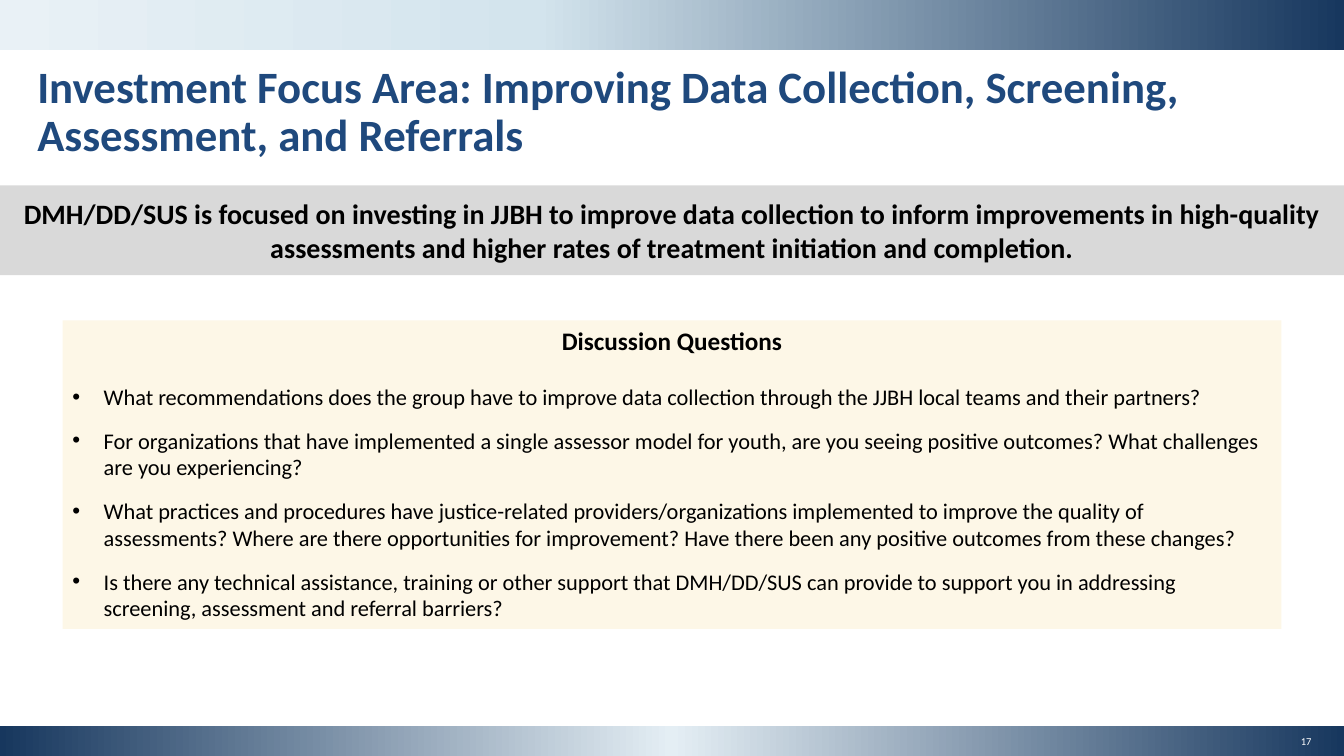
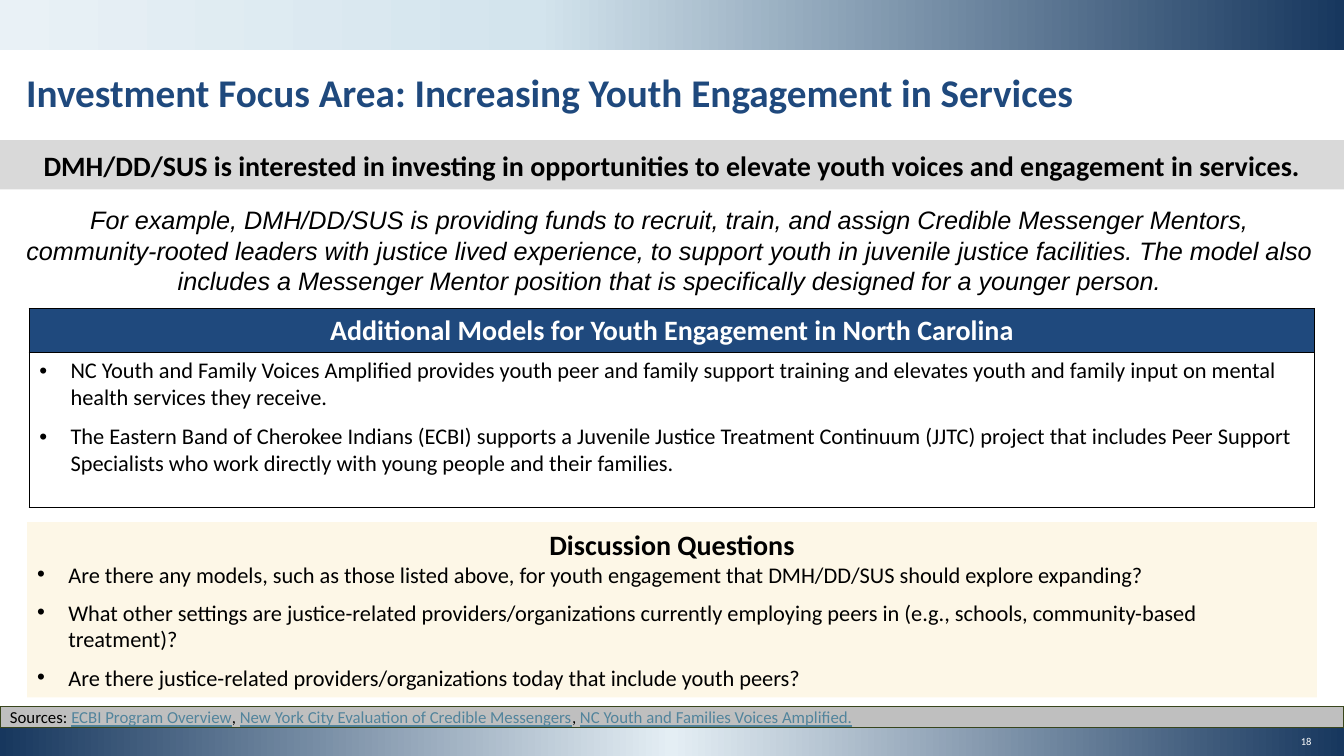
from copy import deepcopy

from lxml.etree import SubElement
from pptx import Presentation
from pptx.dml.color import RGBColor
from pptx.enum.shapes import MSO_SHAPE as Shape
from pptx.enum.text import MSO_ANCHOR as Anchor, PP_ALIGN as Align
from pptx.oxml.ns import qn
from pptx.util import Inches, Pt

NAVY = RGBColor(0x17, 0x37, 0x5E)
BLUE = RGBColor(0x1F, 0x49, 0x7D)
ICE = RGBColor(0xE4, 0xEE, 0xF4)
PALE = RGBColor(0xD3, 0xE4, 0xED)
MIST = RGBColor(0xE9, 0xF1, 0xF6)
GRAY = RGBColor(0xD9, 0xD9, 0xD9)
MID_GRAY = RGBColor(0xBF, 0xBF, 0xBF)
OLIVE = RGBColor(0x38, 0x45, 0x1C)
CREAM = RGBColor(0xFD, 0xF7, 0xE7)
LINK = RGBColor(0x52, 0x84, 0x9C)
BLACK = RGBColor(0, 0, 0)
WHITE = RGBColor(0xFF, 0xFF, 0xFF)

WIDTH, HEIGHT = 13.33, 7.5
TOP_STOPS = [(0, NAVY), (60, PALE), (100, MIST)]
FOOTER_STOPS = [(0, NAVY), (50, ICE), (100, NAVY)]

DATA_SLIDE = {
    "number": 17,
    "title": "Investment Focus Area: Improving Data Collection, Screening, Assessment, and Referrals",
    "title_at": (0.3, 0.6, 13, 1.1),
    "title_size": 32,
    "focus": "DMH/DD/SUS is focused on investing in JJBH to improve data collection to inform "
             "improvements in high-quality assessments and higher rates of treatment initiation "
             "and completion.",
    "focus_at": (0, 1.84, WIDTH, 0.89),
    "questions": [
        "What recommendations does the group have to improve data collection through the JJBH "
        "local teams and their partners?",
        "For organizations that have implemented a single assessor model for youth, are you seeing "
        "positive outcomes? What challenges are you experiencing?",
        "What practices and procedures have justice-related providers/organizations implemented to "
        "improve the quality of assessments? Where are there opportunities for improvement? Have "
        "there been any positive outcomes from these changes?",
        "Is there any technical assistance, training or other support that DMH/DD/SUS can provide "
        "to support you in addressing screening, assessment and referral barriers?",
    ],
    "questions_at": (0.62, 3.18, 12.09, 3.06),
    "heading_size": 18,
    "heading_gap": 19.5,
    "question_gap": 12,
}

YOUTH_SLIDE = {
    "number": 18,
    "title": "Investment Focus Area: Increasing Youth Engagement in Services",
    "title_at": (0.19, 0.69, 13, 0.6),
    "title_size": 28,
    "focus": "DMH/DD/SUS is interested in investing in opportunities to elevate youth voices and "
             "engagement in services.",
    "focus_at": (0, 1.39, WIDTH, 0.49),
    "questions": [
        "Are there any models, such as those listed above, for youth engagement that DMH/DD/SUS "
        "should explore expanding?",
        "What other settings are justice-related providers/organizations currently employing peers "
        "in (e.g., schools, community-based treatment)?",
        "Are there justice-related providers/organizations today that include youth peers?",
    ],
    "questions_at": (0.27, 5.18, 12.79, 1.74),
    "heading_size": 20,
    "heading_gap": 0,
    "question_gap": 8,
}

EXAMPLE = (
    "For example, DMH/DD/SUS is providing funds to recruit, train, and assign Credible Messenger "
    "Mentors, community-rooted leaders with justice lived experience, to support youth in juvenile "
    "justice facilities. The model also includes a Messenger Mentor position that is specifically "
    "designed for a younger person."
)
MODELS_HEADING = "Additional Models for Youth Engagement in North Carolina"
MODELS = [
    "NC Youth and Family Voices Amplified provides youth peer and family support training and "
    "elevates youth and family input on mental health services they receive.",
    "The Eastern Band of Cherokee Indians (ECBI) supports a Juvenile Justice Treatment Continuum "
    "(JJTC) project that includes Peer Support Specialists who work directly with young people and "
    "their families.",
]
SOURCES = [
    "ECBI Program Overview",
    "New York City Evaluation of Credible Messengers",
    "NC Youth and Families Voices Amplified.",
]


def inches(lengths):
    return [Inches(length) for length in lengths]


def add_box(slide, at, fill=None, line=None):
    box = slide.shapes.add_shape(Shape.RECTANGLE, *inches(at))
    box.shadow.inherit = False
    if fill is not None:
        box.fill.solid()
        box.fill.fore_color.rgb = fill
    if line is None:
        box.line.fill.background()
    else:
        box.line.color.rgb = line
        box.line.width = Pt(1)
    box.text_frame.word_wrap = True
    return box


def add_gradient_band(slide, at, stops):
    """Add a band whose gradient runs from right to left through (percent, colour) stops."""
    band = add_box(slide, at)
    band.fill.gradient()
    band.fill.gradient_angle = 180
    first = band.fill.gradient_stops[0]._gs
    first.getparent().append(deepcopy(first))
    for stop, (percent, color) in zip(band.fill.gradient_stops, stops):
        stop.color.rgb = color
        stop.position = percent / 100


def add_text_box(slide, at, margins=(0.1, 0.05)):
    frame = slide.shapes.add_textbox(*inches(at)).text_frame
    frame.word_wrap = True
    frame.margin_left = frame.margin_right = Inches(margins[0])
    frame.margin_top = frame.margin_bottom = Inches(margins[1])
    return frame


def style(paragraph, size, color=BLACK, bold=False, italic=False, align=Align.LEFT, font="Calibri"):
    paragraph.alignment = align
    paragraph.font.name = font
    paragraph.font.size = Pt(size)
    paragraph.font.bold = bold
    paragraph.font.italic = italic
    paragraph.font.color.rgb = color


def write(paragraph, text, size, **look):
    paragraph.text = text
    style(paragraph, size, **look)


def write_bullet(paragraph, text, gap):
    properties = paragraph._p.get_or_add_pPr()
    properties.set("marL", str(Inches(0.31)))
    properties.set("indent", str(-Inches(0.31)))
    SubElement(properties, qn("a:buFont")).set("typeface", "Arial")
    SubElement(properties, qn("a:buChar")).set("char", "•")
    write(paragraph, text, 16)
    paragraph.space_after = Pt(gap)


def add_border(cell):
    properties = cell._tc.get_or_add_tcPr()
    for side in ("lnL", "lnR", "lnT", "lnB"):
        border = SubElement(properties, qn(f"a:{side}"))
        border.set("w", str(Pt(1)))
        fill = SubElement(border, qn("a:solidFill"))
        SubElement(fill, qn("a:srgbClr")).set("val", str(BLACK))


def add_questions(slide, content):
    panel = add_box(slide, content["questions_at"], CREAM).text_frame
    panel.vertical_anchor = Anchor.TOP
    heading = panel.paragraphs[0]
    write(heading, "Discussion Questions", content["heading_size"], bold=True, align=Align.CENTER)
    heading.space_after = Pt(content["heading_gap"])
    for question in content["questions"]:
        write_bullet(panel.add_paragraph(), question, content["question_gap"])


def add_focus_slide(deck, content):
    """Add the bands, page number, title, focus statement and questions of one focus area."""
    slide = deck.slides.add_slide(deck.slide_layouts[6])
    add_gradient_band(slide, (0, HEIGHT - 0.3, WIDTH, 0.3), FOOTER_STOPS)
    add_gradient_band(slide, (0, 0, WIDTH, 0.5), TOP_STOPS)

    number = add_text_box(slide, (12.82, 7.28, 0.27, 0.15), (0, 0.01))
    number.vertical_anchor = Anchor.MIDDLE
    write(number.paragraphs[0], str(content["number"]), 7.5, color=WHITE, align=Align.CENTER)

    title = add_text_box(slide, content["title_at"], (0.07, 0.04)).paragraphs[0]
    write(title, content["title"], content["title_size"], color=BLUE, bold=True)
    title.line_spacing = 0.9

    focus = add_box(slide, content["focus_at"], GRAY).text_frame
    focus.vertical_anchor = Anchor.MIDDLE
    write(focus.paragraphs[0], content["focus"], 20, bold=True, align=Align.CENTER)
    add_questions(slide, content)
    return slide


def add_models_table(slide):
    row_heights = (0.43, 1.54)
    frame = slide.shapes.add_table(2, 1, *inches((0.29, 3.06, 12.75, sum(row_heights))))
    table = frame.table
    table.first_row = table.horz_banding = False
    for row, height, fill in zip(table.rows, row_heights, (BLUE, WHITE)):
        row.height = Inches(height)
        cell = row.cells[0]
        add_border(cell)
        cell.fill.solid()
        cell.fill.fore_color.rgb = fill
    heading, body = (table.cell(row, 0).text_frame for row in range(2))
    write(heading.paragraphs[0], MODELS_HEADING, 20, color=WHITE, bold=True, align=Align.CENTER)
    for index, model in enumerate(MODELS):
        write_bullet(body.add_paragraph() if index else body.paragraphs[0], model, 8)


def add_sources(slide):
    bar = add_box(slide, (0, 7.01, WIDTH, 0.21), MID_GRAY, OLIVE).text_frame
    bar.vertical_anchor = Anchor.MIDDLE
    bar.margin_top = bar.margin_bottom = 0
    line = bar.paragraphs[0]
    style(line, 12)
    for index, source in enumerate(SOURCES):
        lead = line.add_run()
        lead.text = ", " if index else "Sources: "
        name = line.add_run()
        name.text = source
        name.font.color.rgb = LINK
        name.font.underline = True


def add_example(slide):
    example = add_text_box(slide, (0.12, 1.97, 13.04, 1.05)).paragraphs[0]
    write(example, EXAMPLE, 18, italic=True, align=Align.CENTER, font="Arial")
    example.line_spacing = Pt(22)


def main():
    deck = Presentation()
    deck.slide_width, deck.slide_height = inches((WIDTH, HEIGHT))
    add_focus_slide(deck, DATA_SLIDE)
    youth = add_focus_slide(deck, YOUTH_SLIDE)
    add_models_table(youth)
    add_sources(youth)
    add_example(youth)
    deck.save("out.pptx")


if __name__ == "__main__":
    main()
